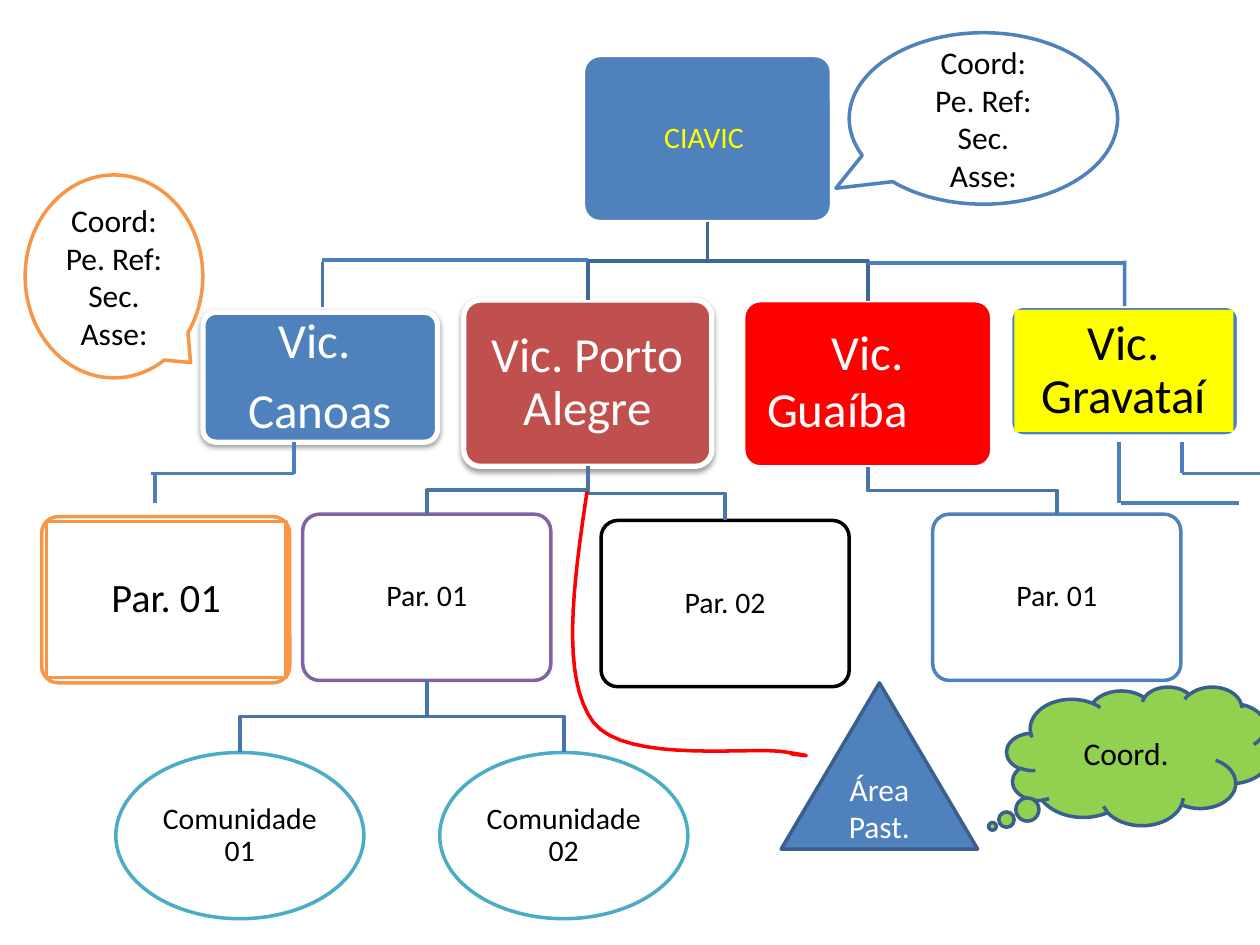
"""Build the organisation chart of the CIAVIC vicariates."""
import pptx
import pptx.dml.color
import pptx.enum.shapes
import pptx.enum.text
import pptx.oxml
import pptx.oxml.ns
import pptx.util

Pt = pptx.util.Pt
SHAPES = pptx.enum.shapes.MSO_SHAPE
BLUE, NAVY, STEEL, ORANGE = "4F81BD", "3A5F8C", "4875AC", "F79646"
WHITE, BLACK, TEAL, RED = "FFFFFF", "000000", "4BACC6", "FF0000"
NODE = (141.8, 95)
ROLES = ("Coord:", "Pe. Ref:", "Sec.", "Asse:")
DRAWING = pptx.oxml.ns.nsdecls("a")
SOFT_SHADOW = (
    f'<a:effectLst {DRAWING}><a:outerShdw blurRad="39400" dist="20300" dir="5400000" '
    'rotWithShape="0"><a:srgbClr val="000000"><a:alpha val="38000"/></a:srgbClr>'
    '</a:outerShdw></a:effectLst>'
)


def color(value):
    return pptx.dml.color.RGBColor.from_string(value)


def bezier(start, first, second, end, steps=16):
    for step in range(1, steps + 1):
        t = step / steps
        yield tuple(
            (1 - t) ** 3 * a + 3 * (1 - t) ** 2 * t * b + 3 * (1 - t) * t ** 2 * c + t ** 3 * d
            for a, b, c, d in zip(start, first, second, end)
        )


class Chart:
    font = "Calibri"
    line_width = 2

    def __init__(self, slide):
        self.slide = slide

    def label(self, shape, lines, size, ink, insets, tight):
        frame = shape.text_frame
        frame.word_wrap = True
        frame.vertical_anchor = pptx.enum.text.MSO_ANCHOR.MIDDLE
        frame.margin_left = frame.margin_right = Pt(insets[0])
        frame.margin_top = frame.margin_bottom = Pt(insets[1])
        for index, line in enumerate(lines):
            paragraph = frame.add_paragraph() if index else frame.paragraphs[0]
            paragraph.text = line
            paragraph.alignment = pptx.enum.text.PP_ALIGN.CENTER
            paragraph.font.name = self.font
            paragraph.font.size = Pt(size)
            paragraph.font.color.rgb = color(ink)
            if tight:
                paragraph.line_spacing = 0.9
                paragraph.space_after = Pt(round(size * 0.35, 1))

    def shape(self, kind, box, fill, line, lines=(), size=18, ink=BLACK,
              insets=(7.2, 3.6), tight=False, adjustments=(), width=line_width):
        shape = self.slide.shapes.add_shape(kind, *map(Pt, box))
        shape.shadow.inherit = False
        for index, value in enumerate(adjustments):
            shape.adjustments[index] = value
        shape.fill.solid()
        shape.fill.fore_color.rgb = color(fill)
        if line:
            shape.line.color.rgb = color(line)
            shape.line.width = Pt(width)
        else:
            shape.line.fill.background()
        self.label(shape, lines, size, ink, insets, tight)
        return shape

    def node(self, box, fill, line, lines=(), size=17, ink=BLACK, inset=5, width=line_width):
        return self.shape(SHAPES.ROUNDED_RECTANGLE, box, fill, line, lines, size, ink,
                          (inset, inset), True, (0.1,), width)

    def raised_node(self, box, fill, lines, inset):
        shape = self.node(box, fill, WHITE, lines, 28, WHITE, inset, 3)
        properties = shape._element.spPr
        properties.remove(properties.find(pptx.oxml.ns.qn("a:effectLst")))
        properties.append(pptx.oxml.parse_xml(SOFT_SHADOW))
        return shape

    def panel(self, box, fill, line, text, size, inset):
        return self.shape(SHAPES.RECTANGLE, box, fill, line, (text,), size,
                          insets=(inset, inset), tight=True)

    def community(self, left, text):
        return self.shape(SHAPES.OVAL, (left, 430, *NODE), WHITE, TEAL, (text,), 17,
                          insets=(5, 5), tight=True)

    def outline(self, points, line):
        start, *others = [tuple(map(Pt, point)) for point in points]
        builder = self.slide.shapes.build_freeform(*start)
        builder.add_line_segments(others, close=False)
        shape = builder.convert_to_shape()
        shape.shadow.inherit = False
        shape.fill.background()
        shape.line.color.rgb = color(line)
        shape.line.width = Pt(self.line_width)

    def branch(self, parent, child, line=STEEL):
        start_x = (parent.left + parent.width / 2) / Pt(1)
        end_x = (child.left + child.width / 2) / Pt(1)
        start_y, end_y = (parent.top + parent.height) / Pt(1), child.top / Pt(1)
        middle = (start_y + end_y) / 2
        self.outline([(start_x, start_y), (start_x, middle), (end_x, middle), (end_x, end_y)],
                     line)

    def line(self, start, end, ink="4B7EBC"):
        connector = self.slide.shapes.add_connector(
            pptx.enum.shapes.MSO_CONNECTOR.STRAIGHT, *map(Pt, start + end))
        connector.line.color.rgb = color(ink)
        connector.line.width = Pt(self.line_width)
        connector._element.spPr.append(pptx.oxml.parse_xml(f"<a:effectLst {DRAWING}/>"))
        return connector


def main():
    presentation = pptx.Presentation()
    presentation.slide_width, presentation.slide_height = Pt(720), Pt(540)
    chart = Chart(presentation.slides.add_slide(presentation.slide_layouts[6]))

    root = chart.node((333.4, 31.7, *NODE), BLUE, WHITE, ("CIAVIC ",), ink="FFFF00")
    porto_alegre = chart.raised_node((265, 171.5, *NODE), "C0504D", ("Vic. Porto Alegre",), 8.6)
    guaiba = chart.node((425, 171.8, *NODE), RED, WHITE, ("Vic. Guaíba",), 28, WHITE, 8.6)
    tab = guaiba.text_frame.paragraphs[0].add_run()
    tab.text = "\t "
    tab.font.size = Pt(31)
    first_parish = chart.node((173, 293.8, *NODE), WHITE, "8064A2", ("Par. 01",))
    second_parish = chart.node((343.5, 297.4, *NODE), WHITE, BLACK, ("Par. 02",))
    guaiba_parish = chart.node((533, 293.8, *NODE), WHITE, BLUE, ("Par. 01",))
    communities = [chart.community(66.2, "Comunidade 01"), chart.community(251.3, "Comunidade 02")]

    for vicariate in (porto_alegre, guaiba):
        chart.branch(root, vicariate, "3F6797")
    for parish in (first_parish, second_parish):
        chart.branch(porto_alegre, parish)
    chart.branch(guaiba, guaiba_parish)
    for community in communities:
        chart.branch(first_parish, community)

    chart.raised_node((116, 178.5, 134, 74.2), BLUE, ("Vic. ", "Canoas"), 7.9)
    gravatai = chart.node((577.5, 175, 130.3, 74.2), BLUE, WHITE)
    chart.panel((579.6, 177.1, 125.3, 69.8), "FFFF00", None, "Vic. Gravataí", 28, 7.9)

    chart.line((184.3, 149.8), (184.3, 175.7), STEEL)
    chart.line((642.7, 175), (642.7, 149)).begin_connect(gravatai, 0)
    for start, end in (
        ((184.3, 148.5), (336, 148.5)),
        ((496, 150.3), (642.5, 150.3)),
        ((675.4, 252.7), (675.4, 270.3)),
        ((639.4, 252.7), (639.4, 287.3)),
        ((640.8, 287.3), (707.8, 287.3)),
        ((675.4, 270.7), (721.4, 270.7)),
        ((168, 252.7), (168, 270.7)),
        ((86.4, 270.7), (168, 270.7)),
        ((88.6, 270), (88.6, 287.3)),
    ):
        chart.line(start, end)

    chart.node((23.8, 295.2, *NODE), WHITE, ORANGE)
    chart.panel((26.6, 298, 136.8, 89.3), WHITE, ORANGE, "Par. 01", 23, 7.2)

    anchors = [(335.5, 280.8), (339, 412.6), (449.3, 429.8), (451.4, 430.6)]
    controls = [((327.6, 334), (320.4, 387.4)), ((357.8, 437), (430.6, 426.2)),
                ((468, 432.7), (460, 432))]
    curve = [anchors[0]]
    for start, (first, second), end in zip(anchors, controls, anchors[1:]):
        curve.extend(bezier(start, first, second, end))
    chart.outline(curve, RED)

    chart.shape(SHAPES.ISOSCELES_TRIANGLE, (446.4, 390.2, 112.3, 95), BLUE, NAVY,
                ("Área Past.",), ink=WHITE)
    chart.shape(SHAPES.OVAL_CALLOUT, (485.3, 18.7, 153.4, 98), WHITE, BLUE, ROLES,
                adjustments=(-0.55, 0.407))
    chart.shape(SHAPES.OVAL_CALLOUT, (14.4, 100, 101.5, 116), WHITE, ORANGE, ROLES,
                adjustments=(0.431, 0.424))
    chart.shape(SHAPES.CLOUD_CALLOUT, (575.3, 392.4, 151.2, 79.2), "92D050", NAVY,
                ("Coord. ",), adjustments=(-0.554, 0.508))
    presentation.save("out.pptx")


if __name__ == "__main__":
    main()
